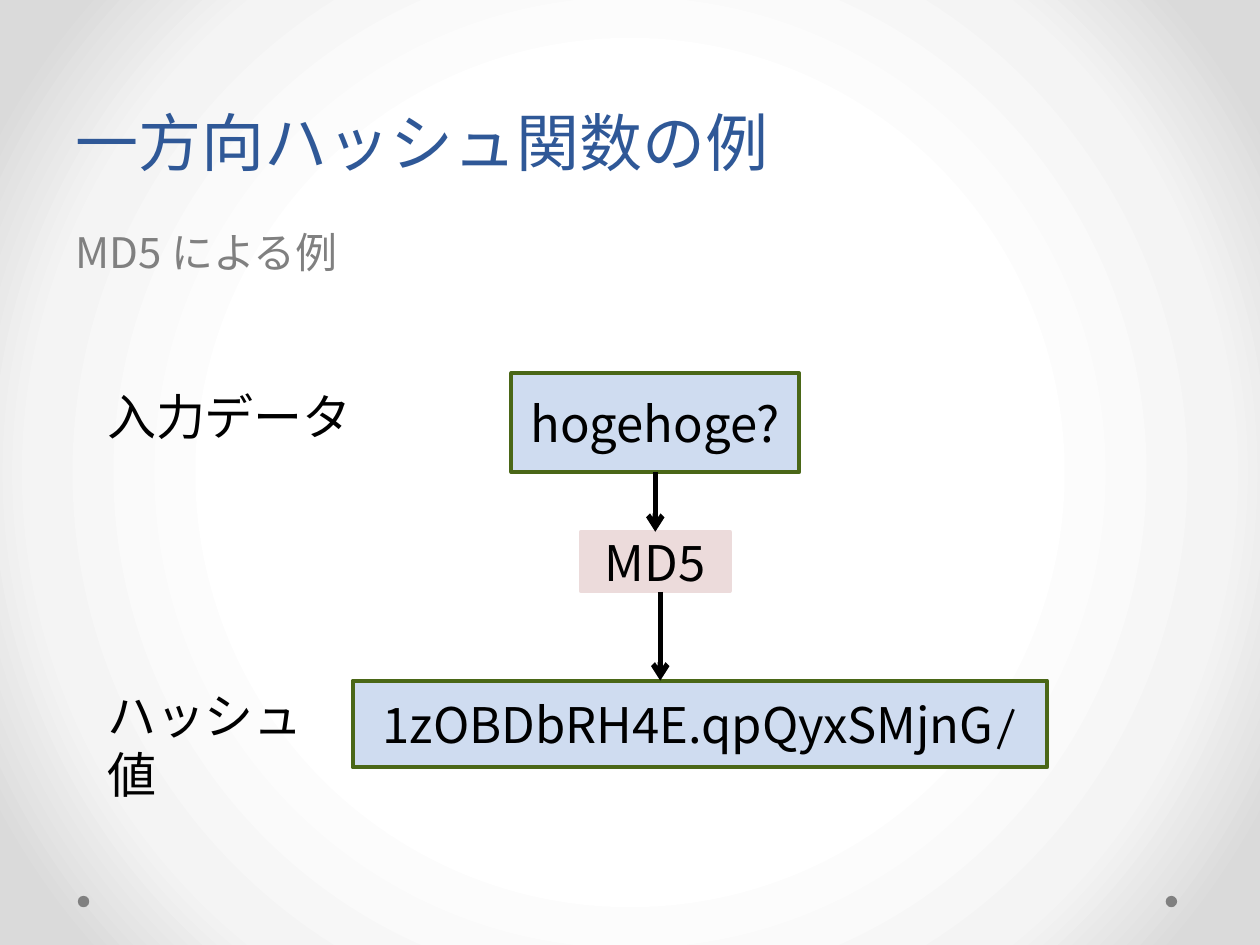
from lxml import etree
from pptx import Presentation
from pptx import util as u
from pptx.dml.color import RGBColor
from pptx.enum import shapes, text
from pptx.oxml import ns

COLORS = {
    "title": "2F5897", "gray": "808080", "black": "000000",
    "data": "CFDCF0", "border": "4A6717", "function": "ECDBDB",
    "center": "FFFFFF", "middle": "F4F4F4", "edge": "DADADA",
}
SANS = "Noto Sans CJK JP"


def color(name):
    return RGBColor.from_string(COLORS[name])


def write(box, spans, size, tint, anchor, align):
    frame = box.text_frame
    frame.word_wrap = True
    frame.vertical_anchor = anchor
    para = frame.paragraphs[0]
    para.alignment = align
    for words, font in spans:
        span = para.add_run()
        span.text = words
        span.font.size = u.Pt(size)
        span.font.name = font
        span.font.color.rgb = color(tint)
        east = etree.SubElement(span.font._element, ns.qn("a:ea"))
        east.set("typeface", SANS)
    return para


deck = Presentation()
deck.slide_width, deck.slide_height = u.Cm(25.4), u.Cm(19.05)
page = deck.slides.add_slide(deck.slide_layouts[6])

page.background.fill.gradient()
gradient = page.element.find(".//" + ns.qn("a:gradFill"))
for child in list(gradient):
    gradient.remove(child)
stops = etree.SubElement(gradient, ns.qn("a:gsLst"))
for position, name in ((50, "center"), (76, "middle"), (92, "edge")):
    stop = etree.SubElement(stops, ns.qn("a:gs"), pos=str(position * 1000))
    etree.SubElement(stop, ns.qn("a:srgbClr"), val=COLORS[name])
circle = etree.SubElement(gradient, ns.qn("a:path"), {"path": "circle"})
etree.SubElement(circle, ns.qn("a:fillToRect"), dict.fromkeys("ltrb", "50000"))

for left in (23.5, 1.57):
    dot = page.shapes.add_shape(
        shapes.MSO_SHAPE.OVAL, u.Cm(left), u.Cm(18.06), u.Cm(0.23), u.Cm(0.23))
    dot.shadow.inherit = False
    dot.fill.solid()
    dot.fill.fore_color.rgb = color("gray")
    dot.line.fill.background()

TOP, BOTTOM = text.MSO_ANCHOR.TOP, text.MSO_ANCHOR.BOTTOM
subtitle = page.shapes.add_textbox(u.Cm(1.27), u.Cm(4.45), u.Cm(22.86), u.Cm(1.7))
para = write(subtitle, [("MD5 による例", SANS)], 24, "gray", TOP, text.PP_ALIGN.LEFT)
para.space_before = u.Pt(4.8)

title = page.shapes.add_textbox(u.Cm(1.27), u.Cm(0.74), u.Cm(22.86), u.Cm(3))
para = write(title, [("一方向ハッシュ関数の例", SANS)], 36, "title", BOTTOM, text.PP_ALIGN.LEFT)
para.line_spacing = u.Pt(58)

boxes = []
for left, top, width, height, fill, border, spans in (
    (10.31, 7.52, 5.8, 2, "data", "border", [("hogehoge?", SANS)]),
    (11.71, 10.72, 3, 1.2, "function", "function", [("MD5", SANS)]),
    (7.11, 13.72, 14, 1.75, "data", "border",
     [("1zOBDbRH4E.qpQyxSMjnG", SANS), ("/", "Cambria")]),
):
    box = page.shapes.add_shape(
        shapes.MSO_SHAPE.RECTANGLE, u.Cm(left), u.Cm(top), u.Cm(width), u.Cm(height))
    box.shadow.inherit = False
    box.fill.solid()
    box.fill.fore_color.rgb = color(fill)
    box.line.color.rgb = color(border)
    box.line.width = u.Pt(2.25)
    write(box, spans, 28, "black", text.MSO_ANCHOR.MIDDLE, text.PP_ALIGN.CENTER)
    boxes.append(box)
source, function, digest = boxes

for words, top, width in (("入力データ", 7.67, 5.64), ("ハッシュ値", 13.69, 5)):
    label = page.shapes.add_textbox(u.Cm(1.91), u.Cm(top), u.Cm(width), u.Cm(1.45))
    write(label, [(words, SANS)], 28, "black", TOP, text.PP_ALIGN.LEFT)
    label.text_frame.auto_size = text.MSO_AUTO_SIZE.SHAPE_TO_FIT_TEXT

arrows = []
for x, start, end in ((13.21, 9.52, 10.72), (13.31, 11.93, 13.72)):
    arrow = page.shapes.add_connector(
        shapes.MSO_CONNECTOR.STRAIGHT, u.Cm(x), u.Cm(start), u.Cm(x), u.Cm(end))
    arrow.line.color.rgb = color("black")
    arrow.line.width = u.Pt(3)
    properties = arrow.element.spPr
    etree.SubElement(properties.find(ns.qn("a:ln")), ns.qn("a:tailEnd"), type="arrow")
    etree.SubElement(properties, ns.qn("a:effectLst"))
    arrows.append(arrow)
arrows[0].begin_connect(source, 2)
arrows[0].end_connect(function, 0)

deck.save("out.pptx")
